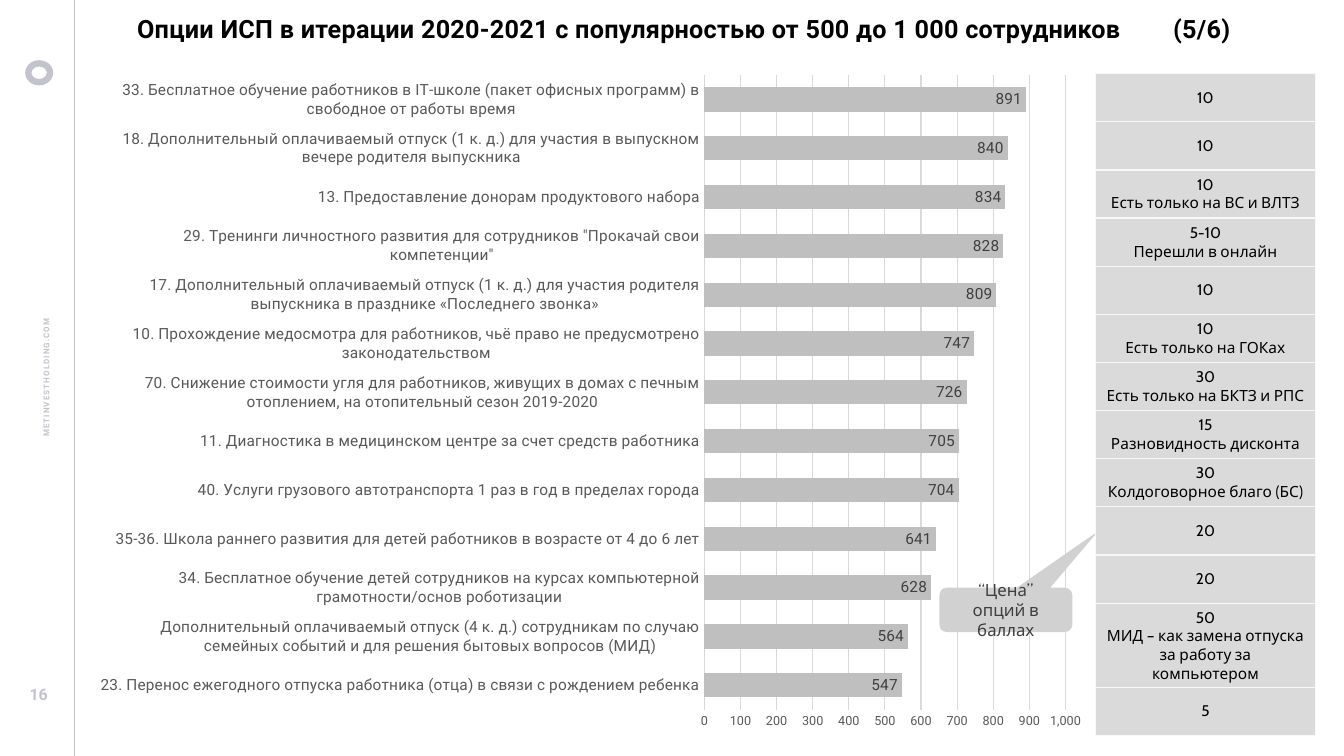
from dataclasses import dataclass

from lxml import etree
from pptx import Presentation
from pptx import util as u
from pptx.chart import data as chart_data
from pptx.dml import color as dml
from pptx.enum import chart as chart_enum, shapes, text
from pptx.oxml import ns

Pt = u.Pt


@dataclass(frozen=True)
class Theme:
    """Colours, fonts and type sizes of the slide."""
    sans: str = "Roboto"
    accent: str = "Cabin"
    black: str = "000000"
    brand: str = "C3C3CC"
    bar: str = "BFBFBF"
    grid: str = "D9D9D9"
    axis: str = "595959"
    value: str = "404040"
    callout: str = "D1D1D1"
    callout_text: str = "3E3E3E"
    cell: str = "DADADA"
    border: str = "F8F8F8"
    title_size: float = 18
    callout_size: float = 12
    page_size: float = 11.4
    body_size: float = 11
    chart_size: float = 10
    tick_size: float = 9
    address_size: float = 5.7


THEME = Theme()

OPTIONS = [
    ("33. Бесплатное обучение работников в IT-школе (пакет офисных программ) в свободное от работы время", 891, "10"),
    ("18. Дополнительный оплачиваемый отпуск (1 к. д.) для участия в выпускном вечере родителя выпускника", 840, "10"),
    ("13. Предоставление донорам продуктового набора", 834, "10\nЕсть только на ВС и ВЛТЗ"),
    ('29. Тренинги личностного развития для сотрудников "Прокачай свои компетенции"', 828, "5-10\nПерешли в онлайн"),
    ("17. Дополнительный оплачиваемый отпуск (1 к. д.) для участия родителя выпускника в празднике «Последнего звонка»",
     809, "10"),
    ("10. Прохождение медосмотра для работников, чьё право не предусмотрено законодательством",
     747, "10\nЕсть только на ГОКах"),
    ("70. Снижение стоимости угля для работников, живущих в домах с печным отоплением, на отопительный сезон 2019-2020",
     726, "30\nЕсть только на БКТЗ и РПС"),
    ("11. Диагностика в медицинском центре за счет средств работника", 705, "15\nРазновидность дисконта"),
    ("40. Услуги грузового автотранспорта 1 раз в год в пределах города", 704, "30\nКолдоговорное благо (БС)"),
    ("35-36. Школа раннего развития для детей работников в возрасте от 4 до 6 лет", 641, "20"),
    ("34. Бесплатное обучение детей сотрудников на курсах компьютерной грамотности/основ роботизации", 628, "20"),
    ("Дополнительный оплачиваемый отпуск (4 к. д.) сотрудникам по случаю семейных событий "
     "и для решения бытовых вопросов (МИД)", 564, "50\nМИД – как замена отпуска за работу за компьютером"),
    ("23. Перенос ежегодного отпуска работника (отца) в связи с рождением ребенка", 547, "5"),
]


def rgb(value):
    """Return a colour object for a hex string."""
    return dml.RGBColor.from_string(value)


def place(left, top, width, height):
    """Return a frame given in points as lengths."""
    return Pt(left), Pt(top), Pt(width), Pt(height)


def style_font(font, name, size, color, bold=False):
    """Set the face, size, colour and weight of a font."""
    font.name, font.size, font.bold = name, Pt(size), bold
    font.color.rgb = rgb(color)


def write(frame, words, name, size, color, bold=False, align=text.PP_ALIGN.CENTER, spacing=0):
    """Fill a text frame and format every run."""
    frame.text = words
    frame.word_wrap = True
    for para in frame.paragraphs:
        para.alignment = align
        for span in para.runs:
            style_font(span.font, name, size, color, bold)
            if spacing:
                span.font._element.set("spc", str(round(spacing * 100)))


def add_text(page, frame, words, size, color, inset=True, **options):
    """Add a bold text box and return it."""
    box = page.shapes.add_textbox(*place(*frame))
    area = box.text_frame
    write(area, words, THEME.sans, size, color, bold=True, **options)
    if not inset:
        area.margin_left = area.margin_right = area.margin_top = area.margin_bottom = 0
    return box


def add_tab(para, position):
    """Give a paragraph one left tab stop."""
    stops = etree.SubElement(para._p.get_or_add_pPr(), ns.qn("a:tabLst"))
    etree.SubElement(stops, ns.qn("a:tab"), pos=str(Pt(position)), algn="l")


def add_shape(page, kind, frame, fill):
    """Add a flat preset shape without outline."""
    shape = page.shapes.add_shape(kind, *place(*frame))
    shape.shadow.inherit = False
    shape.fill.solid()
    shape.fill.fore_color.rgb = rgb(fill)
    shape.line.fill.background()
    return shape


def add_sidebar(page):
    """Add the left strip with emblem, address, rule and page number."""
    add_shape(page, shapes.MSO_SHAPE.DONUT, (18, 43, 20, 18), THEME.brand)
    box = add_text(page, (-184, 260, 430.6, 19.4), "METINVESTHOLDING.COM",
                   THEME.address_size, THEME.brand, inset=False, spacing=0.8)
    box.rotation = 270
    box.text_frame.vertical_anchor = text.MSO_ANCHOR.MIDDLE
    box.text_frame.paragraphs[0].line_spacing = 1.5
    rule = page.shapes.add_connector(shapes.MSO_CONNECTOR.STRAIGHT, Pt(53.3), Pt(540), Pt(53.3), Pt(0))
    rule.line.color.rgb = rgb(THEME.brand)
    rule.line.width = Pt(0.5)
    etree.SubElement(rule._element.spPr, ns.qn("a:effectLst"))
    add_text(page, (0, 485.3, 55.4, 20.9), "16", THEME.page_size, THEME.brand)


def set_plot_area(chart, **layout):
    """Fix the inner plot area as fractions of the chart."""
    area = chart._chartSpace.chart.plotArea
    for old in area.findall(ns.qn("c:layout")):
        area.remove(old)
    holder = etree.Element(ns.qn("c:layout"))
    manual = etree.SubElement(holder, ns.qn("c:manualLayout"))
    settings = {"layoutTarget": "inner", "xMode": "edge", "yMode": "edge", **layout}
    for key, value in settings.items():
        etree.SubElement(manual, ns.qn(f"c:{key}"), val=str(value))
    area.insert(0, holder)


def style_axis(axis, size):
    """Remove tick marks and set the label font of an axis."""
    axis.major_tick_mark = axis.minor_tick_mark = chart_enum.XL_TICK_MARK.NONE
    style_font(axis.tick_labels.font, THEME.sans, size, THEME.axis)


def add_bars(page, frame, options):
    """Add the popularity bar chart, first option on top."""
    data = chart_data.CategoryChartData(number_format="#,##0")
    data.categories = [label for label, _, _ in reversed(options)]
    data.add_series("Series 1", [count for _, count, _ in reversed(options)])
    chart = page.shapes.add_chart(chart_enum.XL_CHART_TYPE.BAR_CLUSTERED, *place(*frame), data).chart
    chart.has_legend = chart.has_title = False
    style_font(chart.font, THEME.sans, THEME.chart_size, THEME.black)
    set_plot_area(chart, x=0.61, y=0.02, w=0.36, h=0.93)

    names, scale = chart.category_axis, chart.value_axis
    style_axis(names, THEME.body_size)
    style_axis(scale, THEME.tick_size)
    scale.minimum_scale, scale.maximum_scale, scale.major_unit = 0, 1000, 100
    scale.tick_labels.number_format = "#,##0"
    scale.tick_labels.number_format_is_linked = False
    scale.format.line.fill.background()
    for line in (names.format.line, scale.major_gridlines.format.line):
        line.color.rgb = rgb(THEME.grid)
        line.width = Pt(0.75)

    plot = chart.plots[0]
    plot.gap_width, plot.vary_by_categories = 100, False
    fill = plot.series[0].format.fill
    fill.solid()
    fill.fore_color.rgb = rgb(THEME.bar)
    plot.has_data_labels = True
    labels = plot.data_labels
    labels.show_value = True
    labels.position = chart_enum.XL_LABEL_POSITION.INSIDE_END
    labels.number_format, labels.number_format_is_linked = "#,##0", False
    style_font(labels.font, THEME.sans, THEME.body_size, THEME.value)


def add_borders(cell):
    """Draw a thin border on all sides of a cell."""
    properties = cell._tc.get_or_add_tcPr()
    for index, side in enumerate(("lnL", "lnR", "lnT", "lnB")):
        line = etree.Element(ns.qn(f"a:{side}"), w=str(Pt(1)))
        fill = etree.SubElement(line, ns.qn("a:solidFill"))
        etree.SubElement(fill, ns.qn("a:srgbClr"), val=THEME.border)
        properties.insert(index, line)


def add_prices(page, frame, options):
    """Add the one-column table of option prices."""
    table = page.shapes.add_table(len(options), 1, *place(*frame)).table
    table.first_row = table.horz_banding = False
    for row, (_, _, price) in zip(table.rows, options):
        row.height = Pt(46.8 if price.startswith("50") else 34.4)
        cell = row.cells[0]
        write(cell.text_frame, price, THEME.accent, THEME.body_size, THEME.black)
        cell.vertical_anchor = text.MSO_ANCHOR.MIDDLE
        cell.fill.solid()
        cell.fill.fore_color.rgb = rgb(THEME.cell)
        add_borders(cell)


def add_callout(page, frame, words):
    """Add the callout that points at the price table."""
    shape = add_shape(page, shapes.MSO_SHAPE.ROUNDED_RECTANGULAR_CALLOUT, frame, THEME.callout)
    for index, value in enumerate((0.694, -1.773, 0.167)):
        shape.adjustments[index] = value
    write(shape.text_frame, words, THEME.accent, THEME.callout_size, THEME.callout_text)
    shape.text_frame.vertical_anchor = text.MSO_ANCHOR.MIDDLE


def main():
    """Build the slide and save it."""
    deck = Presentation()
    deck.slide_width, deck.slide_height = Pt(960), Pt(540)
    page = deck.slides.add_slide(deck.slide_layouts[6])
    add_sidebar(page)
    add_bars(page, (66.2, 43.9, 716.4, 487.4), OPTIONS)
    title = add_text(page, (97.9, 9.4, 841.7, 34.6),
                     "Опции ИСП в итерации 2020-2021 с популярностью от 500 до 1 000 сотрудников\t(5/6)",
                     THEME.title_size, THEME.black, inset=False, align=text.PP_ALIGN.LEFT, spacing=0.2)
    add_tab(title.text_frame.paragraphs[0], 740)
    add_callout(page, (671, 419.8, 95, 31.7), "“Цена” опций в баллах")
    add_prices(page, (782.6, 52.6, 157, 460), OPTIONS)
    deck.save("out.pptx")


if __name__ == "__main__":
    main()
